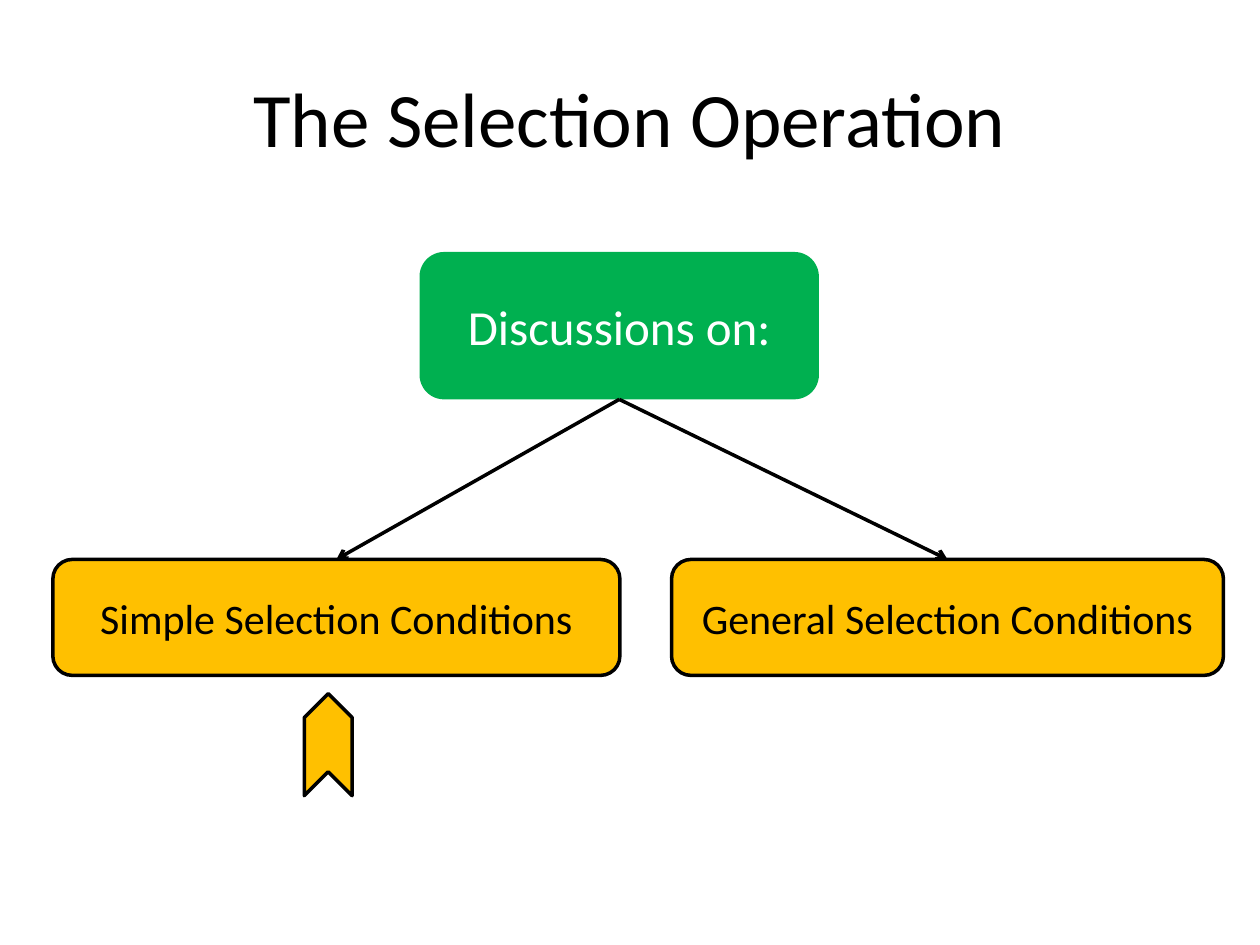
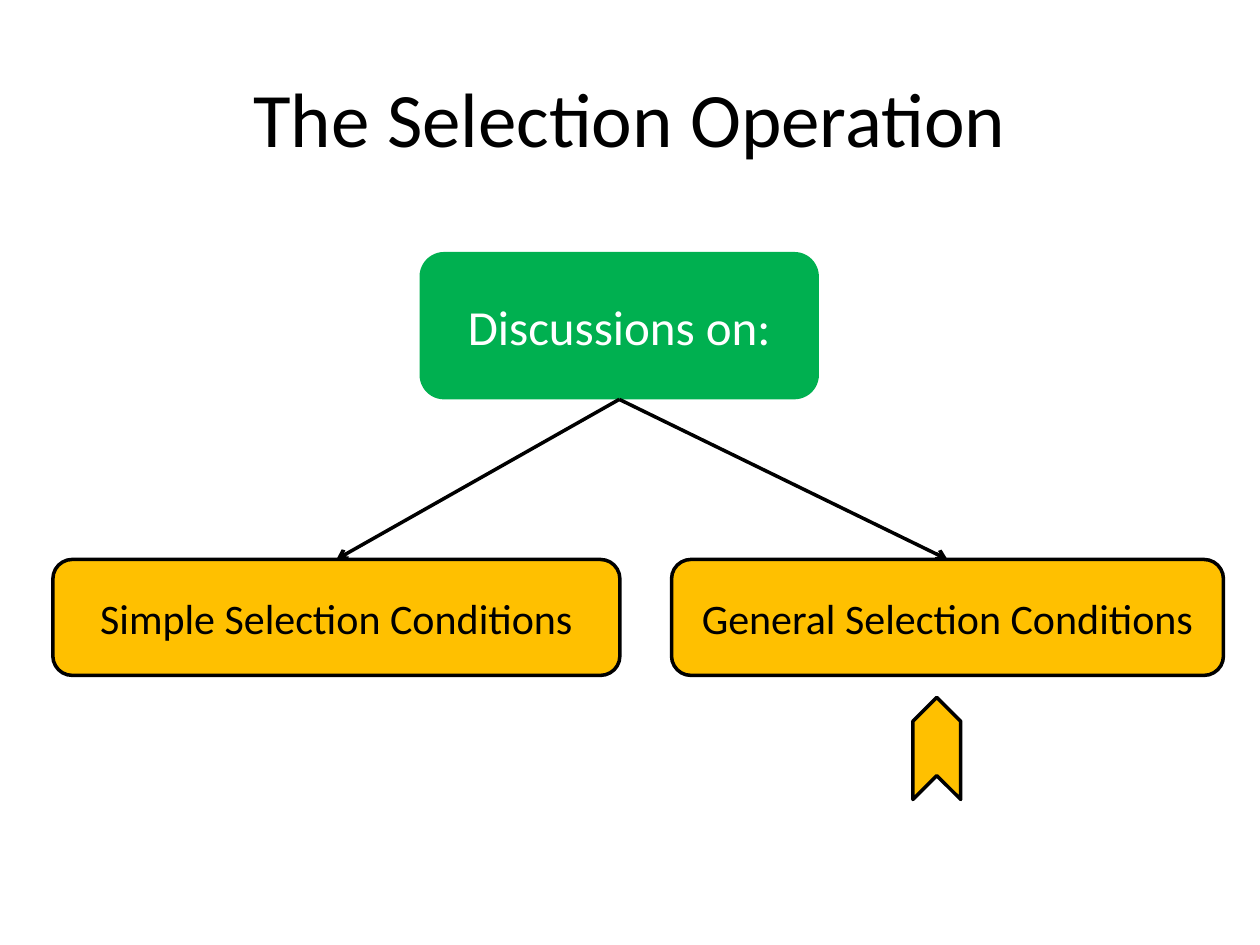
from pptx import Presentation
from pptx.dml.color import RGBColor
from pptx.enum.shapes import MSO_CONNECTOR, MSO_SHAPE
from pptx.enum.text import MSO_ANCHOR, PP_ALIGN
from pptx.oxml.ns import qn
from pptx.util import Inches, Pt
from lxml.etree import SubElement

BLACK, WHITE, GREEN, AMBER = "000000", "FFFFFF", "00B050", "FFC000"
FONT = "Calibri"
LINE_WIDTH = Pt(2)
TOPICS = [("Simple Selection Conditions", 0.42, 4.5),
          ("General Selection Conditions", 5.33, 4.38)]
# Left and top of the chevron under the topic each slide introduces
MARKERS = [(2.2, 5.72), (7.03, 5.75)]


def write(shape, text, size, color):
    """Put one centred line of text in a shape."""
    frame = shape.text_frame
    frame.text = text
    frame.word_wrap = True
    frame.vertical_anchor = MSO_ANCHOR.MIDDLE
    para = frame.paragraphs[0]
    para.alignment = PP_ALIGN.CENTER
    font = para.runs[0].font
    font.name, font.size = FONT, Pt(size)
    font.color.rgb = RGBColor.from_string(color)


def add_filled(slide, kind, left, top, width, height, fill, line=None):
    """Add a flat shape; without a line colour it has no outline."""
    shape = slide.shapes.add_shape(kind, Inches(left), Inches(top), Inches(width), Inches(height))
    shape.shadow.inherit = False
    shape.fill.solid()
    shape.fill.fore_color.rgb = RGBColor.from_string(fill)
    if line:
        shape.line.color.rgb = RGBColor.from_string(line)
        shape.line.width = LINE_WIDTH
    else:
        shape.line.fill.background()
    return shape


deck = Presentation()
deck.slide_width, deck.slide_height = Inches(10), Inches(7.5)
title_only = deck.slide_layouts[5]

for marker_left, marker_top in MARKERS:
    slide = deck.slides.add_slide(title_only)
    title = slide.shapes.title
    title.left, title.top = Inches(0.5), Inches(0.3)
    title.width, title.height = Inches(9), Inches(1.25)
    write(title, "The Selection Operation", 44, BLACK)

    root = add_filled(slide, MSO_SHAPE.ROUNDED_RECTANGLE, 3.33, 2, 3.17, 1.17, GREEN)
    write(root, "Discussions on:", 28, WHITE)

    for topic, left, width in TOPICS:
        box = add_filled(slide, MSO_SHAPE.ROUNDED_RECTANGLE, left, 4.44, width, 0.92, AMBER, BLACK)
        write(box, topic, 24, BLACK)
        box.text_frame.margin_top = box.text_frame.margin_bottom = 0

        arrow = slide.shapes.add_connector(MSO_CONNECTOR.STRAIGHT, 0, 0, 0, 0)
        arrow.begin_connect(root, 2)
        arrow.end_connect(box, 0)
        arrow.line.color.rgb = RGBColor.from_string(BLACK)
        arrow.line.width = LINE_WIDTH
        SubElement(arrow.line._get_or_add_ln(), qn("a:tailEnd"), type="arrow")
        SubElement(arrow._element.spPr, qn("a:effectLst"))

    marker = add_filled(slide, MSO_SHAPE.CHEVRON, marker_left, marker_top, 0.81, 0.38, AMBER, BLACK)
    marker.rotation = 270

deck.save("out.pptx")
